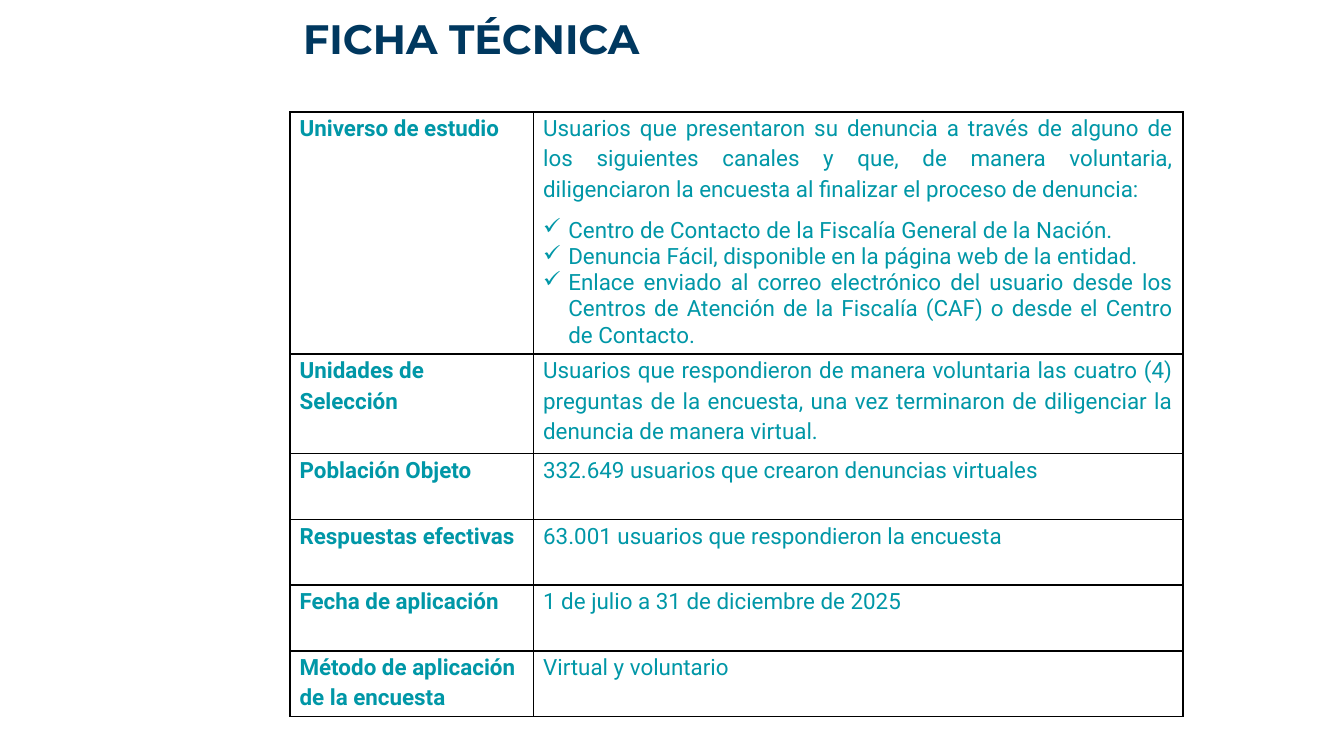
from lxml.etree import SubElement
from pptx import Presentation
from pptx.dml.color import RGBColor
from pptx.enum.text import MSO_ANCHOR, MSO_AUTO_SIZE, PP_ALIGN
from pptx.oxml.ns import qn
from pptx.util import Pt

PIXEL = 9525
NAVY = "00385F"
TEAL = "0097A7"
BLACK = "000000"

COLUMN_WIDTHS = [174, 464]
ROW_HEIGHTS = [173, 71] + [47] * 4
CHANNELS = [
    "Centro de Contacto de la Fiscalía General de la Nación.",
    "Denuncia Fácil, disponible en la página web de la entidad.",
    "Enlace enviado al correo electrónico del usuario desde los Centros de Atención "
    "de la Fiscalía (CAF) o desde el Centro de Contacto.",
]
ROWS = [
    ("Universo de estudio",
     "Usuarios que presentaron su denuncia a través de alguno de los siguientes canales "
     "y que, de manera voluntaria, diligenciaron la encuesta al finalizar el proceso de "
     "denuncia:", CHANNELS),
    ("Unidades de Selección",
     "Usuarios que respondieron de manera voluntaria las cuatro (4) preguntas de la "
     "encuesta, una vez terminaron de diligenciar la denuncia de manera virtual.", []),
    ("Población Objeto", "332.649 usuarios que crearon denuncias virtuales", []),
    ("Respuestas efectivas", "63.001 usuarios que respondieron la encuesta", []),
    ("Fecha de aplicación", "1 de julio a 31 de diciembre de 2025", []),
    ("Método de aplicación de la encuesta", "Virtual y voluntario", []),
]


def px(length):
    return length * PIXEL


def color(value):
    return RGBColor.from_string(value)


def apply_format(target, values):
    for name, value in values.items():
        setattr(target, name, value)


def write_paragraph(paragraph, text, layout, font, font_color):
    apply_format(paragraph, layout)
    run = paragraph.add_run()
    run.text = text
    apply_format(run.font, font)
    run.font.color.rgb = color(font_color)


def add_check_bullet(paragraph):
    properties = paragraph._p.get_or_add_pPr()
    properties.set("marL", str(px(18)))
    properties.set("indent", str(px(-18)))
    bullet_color = SubElement(properties, qn("a:buClr"))
    SubElement(bullet_color, qn("a:srgbClr"), val=TEAL)
    SubElement(properties, qn("a:buChar"), char="✓")


def add_borders(cell):
    properties = cell._tc.get_or_add_tcPr()
    for side in ("lnL", "lnR", "lnT", "lnB"):
        line = SubElement(properties, qn(f"a:{side}"), w=str(Pt(1)))
        fill = SubElement(line, qn("a:solidFill"))
        SubElement(fill, qn("a:srgbClr"), val=BLACK)


def place_title(slide, left, top, width, height):
    title = slide.shapes.title
    apply_format(title, {"left": px(left), "top": px(top),
                         "width": px(width), "height": px(height)})
    margin = Pt(7.2)
    apply_format(title.text_frame, {
        "margin_left": margin, "margin_right": margin,
        "margin_top": margin, "margin_bottom": margin,
        "word_wrap": True, "auto_size": MSO_AUTO_SIZE.NONE,
        "vertical_anchor": MSO_ANCHOR.TOP})
    write_paragraph(title.text_frame.paragraphs[0], "FICHA TÉCNICA",
                    {"alignment": PP_ALIGN.LEFT},
                    {"name": "Montserrat", "size": Pt(22), "bold": True}, NAVY)


def fill_cell(cell, text, alignment, bold, bullets=()):
    add_borders(cell)
    cell.fill.background()
    apply_format(cell, {"margin_left": px(7), "margin_right": px(7),
                        "margin_top": 0, "margin_bottom": 0,
                        "vertical_anchor": MSO_ANCHOR.TOP})
    font = {"name": "Roboto", "size": Pt(12), "bold": bold}
    write_paragraph(cell.text_frame.paragraphs[0], text,
                    {"alignment": alignment, "line_spacing": 1.15, "space_after": Pt(8)},
                    font, TEAL)
    for bullet in bullets:
        paragraph = cell.text_frame.add_paragraph()
        add_check_bullet(paragraph)
        write_paragraph(paragraph, bullet, {"alignment": alignment}, font, TEAL)


def place_survey_table(slide, left, top):
    table = slide.shapes.add_table(
        len(ROWS), len(COLUMN_WIDTHS), px(left), px(top),
        px(sum(COLUMN_WIDTHS)), px(sum(ROW_HEIGHTS))).table
    apply_format(table, {"first_row": False, "horz_banding": False})
    for column, width in zip(table.columns, COLUMN_WIDTHS):
        column.width = px(width)
    for row, height, (label, description, bullets) in zip(table.rows, ROW_HEIGHTS, ROWS):
        row.height = px(height)
        fill_cell(row.cells[0], label, PP_ALIGN.LEFT, True)
        fill_cell(row.cells[1], description, PP_ALIGN.JUSTIFY, False, bullets)


def main():
    presentation = Presentation()
    apply_format(presentation, {"slide_width": px(960), "slide_height": px(540)})
    slide = presentation.slides.add_slide(presentation.slide_layouts[5])
    place_title(slide, 207, 0, 734, 45)
    place_survey_table(slide, 207, 80)
    presentation.save("out.pptx")


if __name__ == "__main__":
    main()
